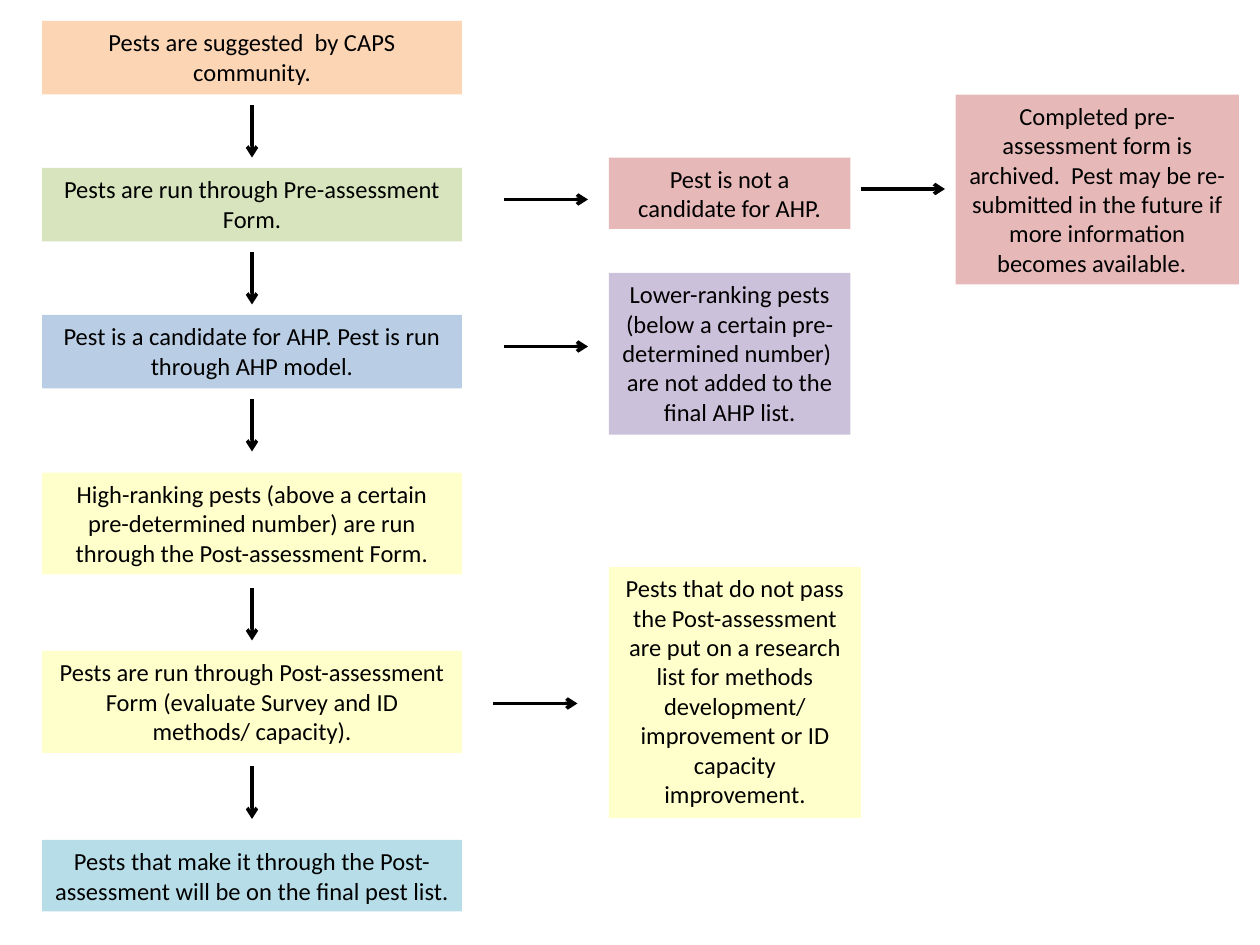
from lxml import etree
from pptx import Presentation
from pptx.dml.color import RGBColor
from pptx.enum.shapes import MSO_CONNECTOR
from pptx.enum.text import MSO_ANCHOR, MSO_AUTO_SIZE, PP_ALIGN
from pptx.oxml.ns import qn
from pptx.util import Pt

STRAIGHT = MSO_CONNECTOR.STRAIGHT
TOP = MSO_ANCHOR.TOP
FIT_TEXT = MSO_AUTO_SIZE.SHAPE_TO_FIT_TEXT
CENTER = PP_ALIGN.CENTER

PX = 7620  # EMU per px, 120 px to the inch
COLORS = {
    "orange": "FCD5B5",
    "green": "D7E4BD",
    "blue": "B9CDE5",
    "red": "E6B9B8",
    "purple": "CCC1DA",
    "yellow": "FFFFCC",
    "teal": "B7DEE8",
    "black": "000000",
}
DOWN_LENGTH, ACROSS_LENGTH = 50, 80

# top, height, colour, text, top of the arrow that leads to the next step
STEPS = [
    (0, 70, "orange", "Pests are suggested  by CAPS community.", 80),
    (140, 70, "green", "Pests are run through Pre-assessment Form.", 220),
    (280, 70, "blue",
     "Pest is a candidate for AHP. Pest is run through AHP model.", 360),
    (430, 97, "yellow",
     "High-ranking pests (above a certain pre-determined number) are run "
     "through the Post-assessment Form.", 540),
    (600, 97, "yellow",
     "Pests are run through Post-assessment Form (evaluate Survey and ID "
     "methods/ capacity).", 710),
    (780, 68, "teal",
     "Pests that make it through the Post-assessment will be on the final "
     "pest list.", None),
]

# arrow start, then box (left, top, width, height), colour, text
OUTCOMES = [
    ((10, 100), (110, 60, 230, 68), "red", "Pest is not a candidate for AHP."),
    ((350, 90), (440, 0, 270, 181), "red",
     "Completed pre-assessment form is archived.  Pest may be re-submitted in "
     "the future if more information becomes available.  "),
    ((10, 240), (110, 170, 230, 154), "purple",
     "Lower-ranking pests (below a certain pre-determined number)  are not "
     "added to the final AHP list."),
    ((0, 580), (110, 450, 240, 239), "yellow",
     "Pests that do not pass the Post-assessment are put on a research list "
     "for methods development/ improvement or ID capacity improvement."),
]


def rgb(name):
    return RGBColor.from_string(COLORS[name])


def add_box(page, left, top, width, height, color, text):
    box = page.shapes.add_textbox(left * PX, top * PX, width * PX, height * PX)
    box.fill.solid()
    box.fill.fore_color.rgb = rgb(color)
    frame = box.text_frame
    frame.word_wrap = True
    frame.auto_size = FIT_TEXT
    frame.vertical_anchor = TOP
    para = frame.paragraphs[0]
    para.text = text
    para.alignment = CENTER
    para.font.name = "Calibri"
    para.font.size = Pt(14)
    para.font.color.rgb = rgb("black")


def add_arrow(page, left, top, across=0, down=0):
    arrow = page.shapes.add_connector(
        STRAIGHT, left * PX, top * PX, (left + across) * PX, (top + down) * PX)
    arrow.line.color.rgb = rgb("black")
    arrow.line.width = Pt(2)
    etree.SubElement(arrow.line._get_or_add_ln(), qn("a:tailEnd"), type="arrow")
    etree.SubElement(arrow._element.spPr, qn("a:effectLst"))


def add_steps(page, left, top, width):
    """Main column of steps, each leading down to the next."""
    for step_top, height, color, text, arrow_top in STEPS:
        add_box(page, left, top + step_top, width, height, color, text)
        if arrow_top is not None:
            add_arrow(page, left + width // 2, top + arrow_top, down=DOWN_LENGTH)


def add_outcomes(page, left, top):
    """Side outcomes, each reached by an arrow from its left."""
    for (arrow_left, arrow_top), box, color, text in OUTCOMES:
        add_arrow(page, left + arrow_left, top + arrow_top, across=ACROSS_LENGTH)
        box_left, box_top, width, height = box
        add_box(page, left + box_left, top + box_top, width, height, color, text)


def main():
    deck = Presentation()
    deck.slide_width, deck.slide_height = 1200 * PX, 900 * PX
    page = deck.slides.add_slide(deck.slide_layouts[6])
    add_steps(page, 40, 20, 400)
    add_outcomes(page, 470, 90)
    deck.save("out.pptx")


if __name__ == "__main__":
    main()
